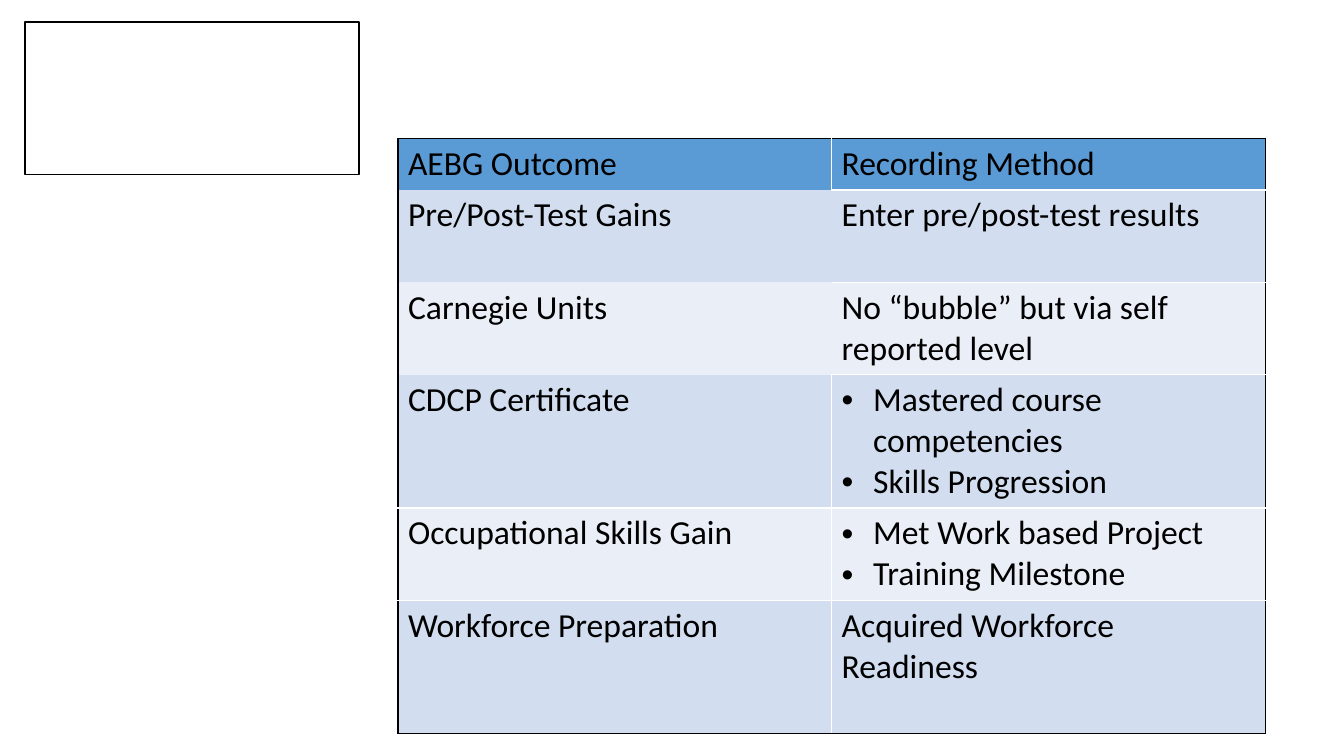
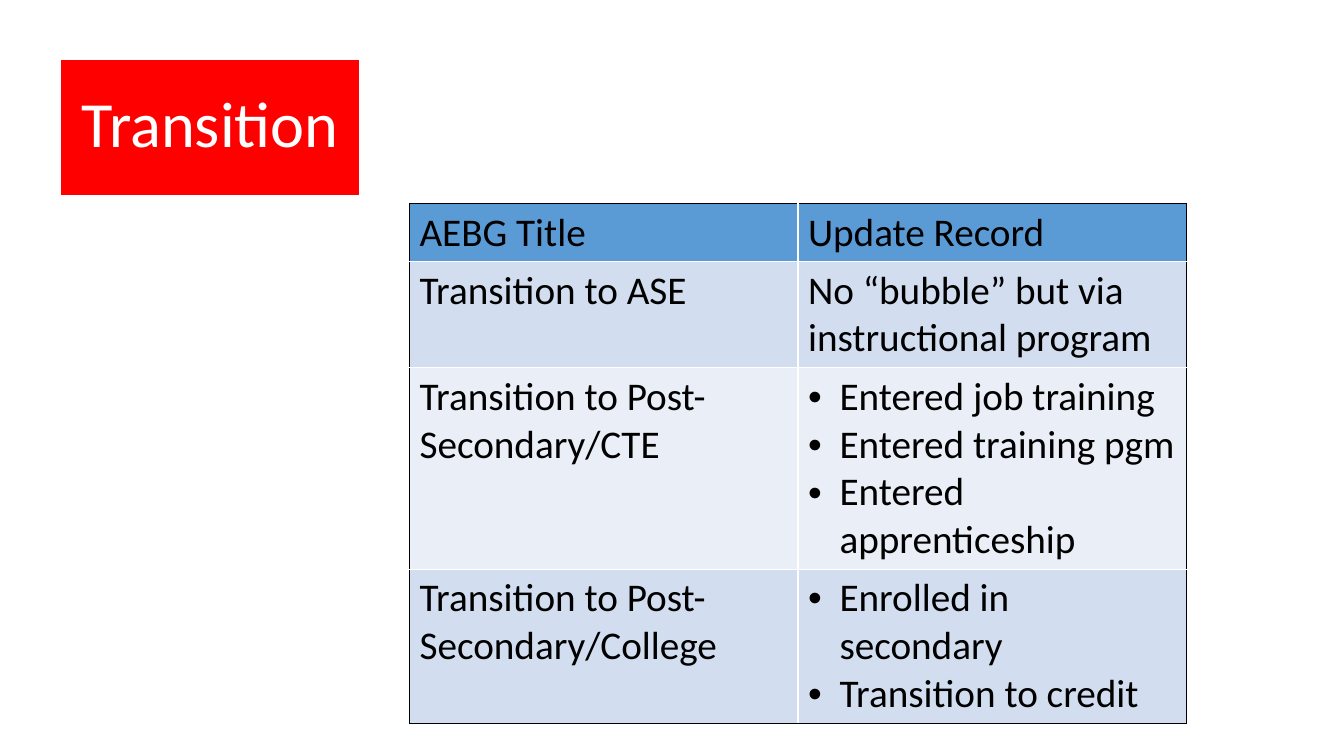
import dataclasses

import lxml.etree
import pptx
import pptx.dml.color
import pptx.enum.shapes
import pptx.enum.text
import pptx.oxml
import pptx.oxml.ns
import pptx.util

EMU_PER_PX = 9525
TITLE_ONLY, BLANK = 5, 6


@dataclasses.dataclass(frozen=True)
class Theme:
    font: str = "Calibri"
    ink: str = "000000"
    paper: str = "FFFFFF"
    accent: str = "FF0000"
    header: str = "5B9BD5"
    bands: tuple = ("D2DEEF", "EAEFF7")
    title_size: int = 46
    line_width: int = 1
    bullet_indent: int = 30
    title_inset: int = 18


def px(length):
    return pptx.util.Emu(length * EMU_PER_PX)


def rgb(colour):
    return pptx.dml.color.RGBColor.from_string(colour)


def add_node(parent, tag, **attributes):
    node = lxml.etree.SubElement(parent, pptx.oxml.ns.qn(tag))
    for name, value in attributes.items():
        node.set(name, str(value))
    return node


def write(frame, text, *, size, font, colour, align=None, spacing=None, bullet_indent=0):
    lines = [text] if isinstance(text, str) else text
    for index, line in enumerate(lines):
        para = frame.add_paragraph() if index else frame.paragraphs[0]
        para.alignment = align
        para.line_spacing = spacing
        span = para.add_run()
        span.text = line
        span.font.name = font
        span.font.size = pptx.util.Pt(size)
        span.font.bold = False
        span.font.color.rgb = rgb(colour)
        if bullet_indent:
            properties = para._p.get_or_add_pPr()
            properties.set("marL", str(px(bullet_indent)))
            properties.set("indent", str(px(-bullet_indent)))
            add_node(properties, "a:buFont", typeface="Arial")
            add_node(properties, "a:buChar", char="•")


class SlideBuilder:
    def __init__(self, deck, theme):
        self.deck = deck
        self.theme = theme
        self.page = None

    def new_page(self, layout):
        self.page = self.deck.slides.add_slide(self.deck.slide_layouts[layout])

    def paint(self, box, fill, line):
        box.fill.solid()
        box.fill.fore_color.rgb = rgb(fill)
        box.line.color.rgb = rgb(line)
        box.line.width = pptx.util.Pt(self.theme.line_width)

    def box(self, left, top, width, height):
        box = self.page.shapes.add_shape(
            pptx.enum.shapes.MSO_SHAPE.RECTANGLE, px(left), px(top), px(width), px(height))
        box.shadow.inherit = False
        self.paint(box, self.theme.paper, self.theme.ink)

    def title(self, text, left, top, width, height):
        theme = self.theme
        title = self.page.shapes.title
        title.left, title.top = px(left), px(top)
        title.width, title.height = px(width), px(height)
        self.paint(title, theme.accent, theme.paper)
        frame = title.text_frame
        frame.auto_size = pptx.enum.text.MSO_AUTO_SIZE.NONE
        frame.word_wrap = True
        frame.vertical_anchor = pptx.enum.text.MSO_ANCHOR.MIDDLE
        frame.margin_left = frame.margin_right = px(theme.title_inset)
        frame.margin_top = frame.margin_bottom = px(theme.title_inset)
        write(frame, text, size=theme.title_size, font=theme.font, colour=theme.paper,
              align=pptx.enum.text.PP_ALIGN.CENTER, spacing=0.9)

    def border(self, cell, side, colour):
        line = add_node(cell._tc.get_or_add_tcPr(), f"a:ln{side}",
                        w=pptx.util.Pt(self.theme.line_width))
        if colour:
            add_node(add_node(line, "a:solidFill"), "a:srgbClr", val=colour)
        else:
            add_node(line, "a:noFill")

    def table(self, rows, left, top, column_width, row_heights, size, open_rows=()):
        theme = self.theme
        row_count, column_count = len(rows), len(rows[0])
        table = self.page.shapes.add_table(
            row_count, column_count, px(left), px(top),
            px(column_width * column_count), px(sum(row_heights))).table
        table.first_row = table.horz_banding = False
        for column in table.columns:
            column.width = px(column_width)
        for row, height in enumerate(row_heights):
            table.rows[row].height = px(height)

        def upright(row, edge):
            if edge in (0, column_count):
                return theme.ink
            return None if row in open_rows else theme.paper

        def level(column, edge):
            if edge in (0, row_count):
                return theme.ink
            hidden = column == 0 and (edge in open_rows or edge - 1 in open_rows)
            return None if hidden else theme.paper

        for row, texts in enumerate(rows):
            for column, text in enumerate(texts):
                cell = table.cell(row, column)
                self.border(cell, "L", upright(row, column))
                self.border(cell, "R", upright(row, column + 1))
                self.border(cell, "T", level(column, row))
                self.border(cell, "B", level(column, row + 1))
                cell.fill.solid()
                cell.fill.fore_color.rgb = rgb(
                    theme.bands[(row - 1) % 2] if row else theme.header)
                indent = theme.bullet_indent if isinstance(text, list) else 0
                write(cell.text_frame, text, size=size, font=theme.font,
                      colour=theme.ink, bullet_indent=indent)


OUTCOMES = [
    ("AEBG Outcome", "Recording Method"),
    ("Pre/Post-Test Gains", "Enter pre/post-test results"),
    ("Carnegie Units", "No “bubble” but via self reported level"),
    ("CDCP Certificate", ["Mastered course competencies", "Skills Progression"]),
    ("Occupational Skills Gain", ["Met Work based Project", "Training Milestone"]),
    ("Workforce Preparation", "Acquired Workforce Readiness"),
]

TRANSITIONS = [
    ("AEBG Title", "Update Record"),
    ("Transition to ASE", "No “bubble” but via instructional program"),
    ("Transition to Post-Secondary/CTE",
     ["Entered job training", "Entered training pgm", "Entered apprenticeship"]),
    ("Transition to Post-Secondary/College",
     ["Enrolled in secondary", "Transition to credit"]),
]


def main():
    deck = pptx.Presentation()
    deck.slide_width, deck.slide_height = px(1280), px(720)
    builder = SlideBuilder(deck, Theme())

    builder.new_page(BLANK)
    builder.box(24, 21, 318, 145)
    builder.table(OUTCOMES, 379, 132, 413, (49, 88, 88, 126, 88, 127),
                  size=24, open_rows=(1, 2))

    builder.new_page(TITLE_ONLY)
    builder.title("Transition", 57, 56, 286, 130)
    builder.table(TRANSITIONS, 390, 194, 370, (55, 101, 192, 146), size=28)

    deck.save("out.pptx")


if __name__ == "__main__":
    main()
